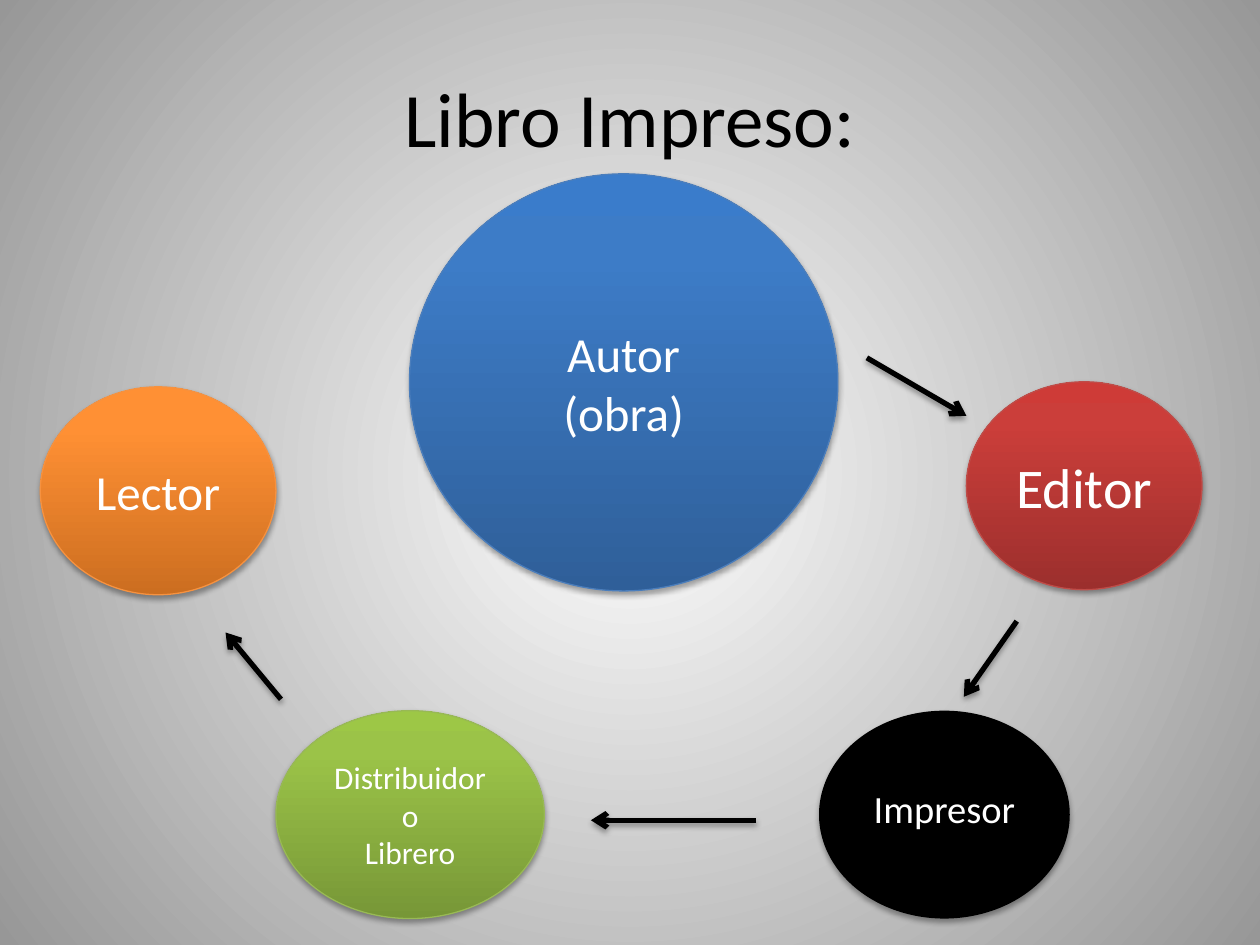
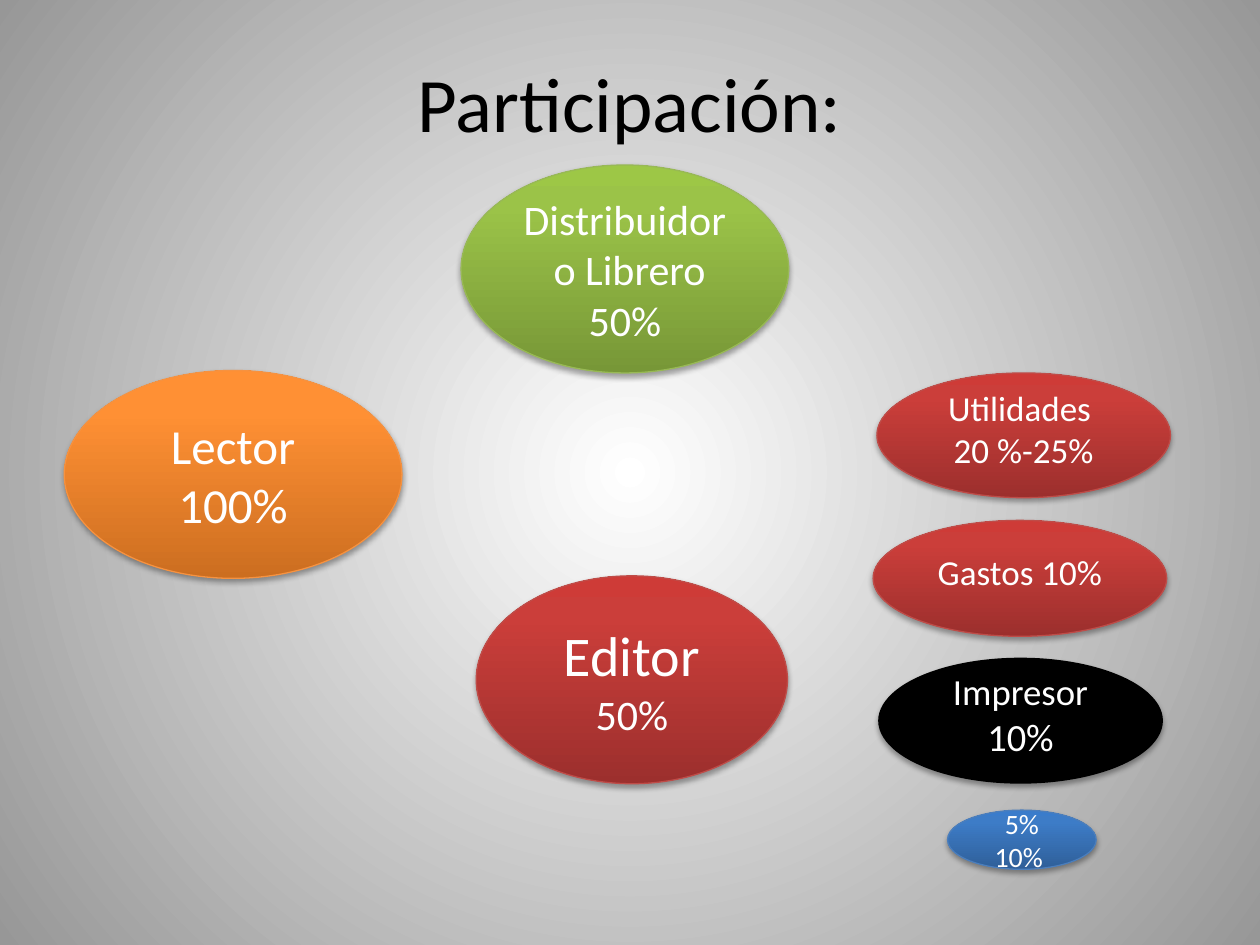
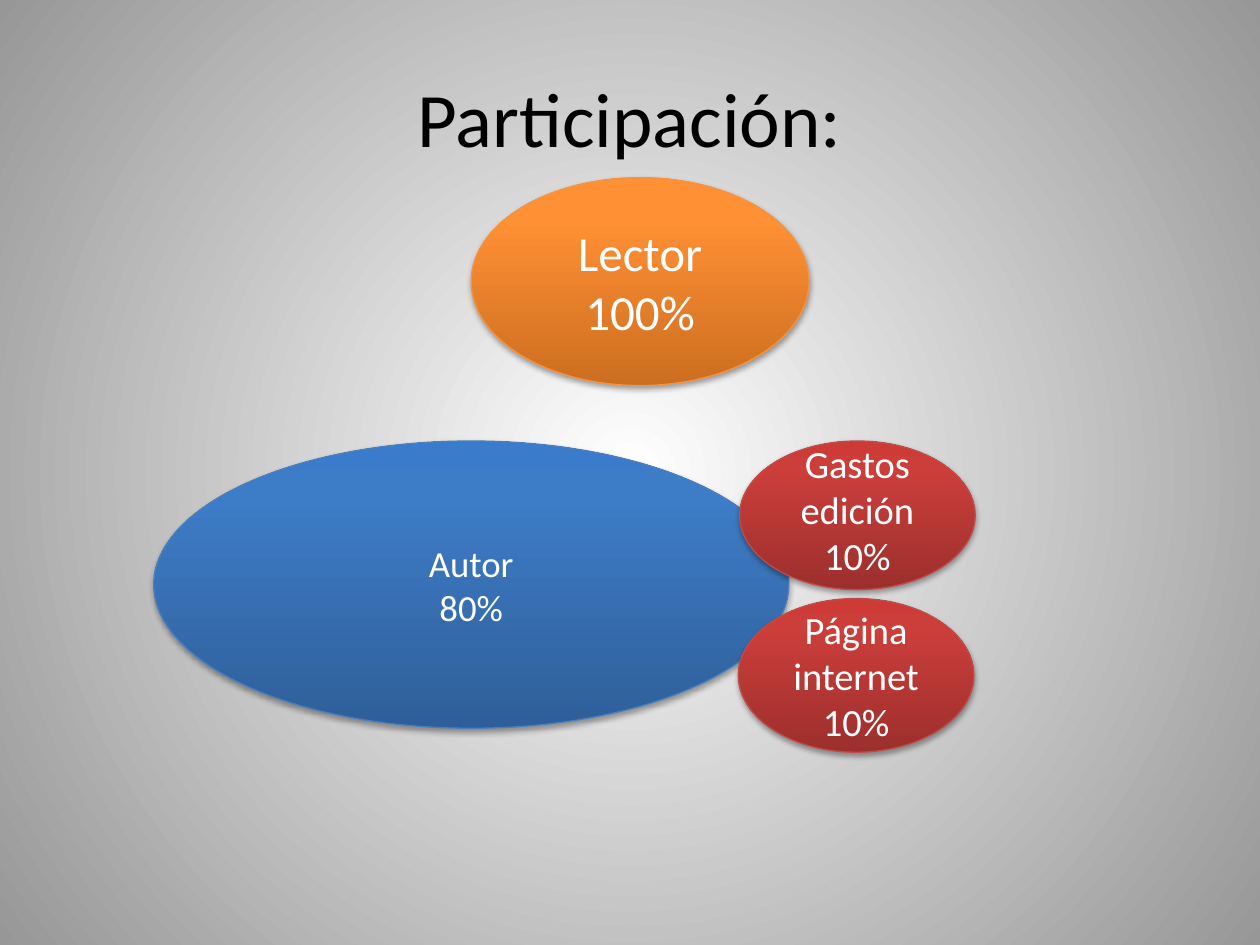
import pptx
import pptx.util
import pptx.dml.color
import pptx.enum.shapes
import pptx.enum.text
import pptx.oxml
import pptx.oxml.ns

# Grid: 100 columns by 75 rows
deck = pptx.Presentation()
deck.slide_width = pptx.util.Inches(10)
deck.slide_height = pptx.util.Inches(7.5)
cell = deck.slide_width / 100
qn = pptx.oxml.ns.qn
names = pptx.oxml.ns.nsdecls("a")
mid = pptx.enum.text.MSO_ANCHOR.MIDDLE


def grade(fill, props, stops, kind):
    """Fill with a gradient; stops are (percent, hex) pairs."""
    fill.solid()
    marks = "".join(f'<a:gs pos="{pos * 1000}"><a:srgbClr val="{tint}"/></a:gs>'
                    for pos, tint in stops)
    flat = props.find(qn("a:solidFill"))
    props.replace(flat, pptx.oxml.parse_xml(
        f'<a:gradFill {names} rotWithShape="1"><a:gsLst>{marks}</a:gsLst>{kind}</a:gradFill>'))


def write(frame, lines, tint):
    """Centred lines, each a (text, size) pair."""
    frame.word_wrap = True
    frame.vertical_anchor = mid
    for num, (text, size) in enumerate(lines):
        para = frame.paragraphs[0] if num == 0 else frame.add_paragraph()
        para.alignment = pptx.enum.text.PP_ALIGN.CENTER
        run = para.add_run()
        run.text = text
        run.font.name = "Calibri"
        run.font.size = pptx.util.Pt(size)
        run.font.color.rgb = pptx.dml.color.RGBColor.from_string(tint)


# Shared look
radial = ('<a:path path="circle">'
          '<a:fillToRect l="50000" t="50000" r="50000" b="50000"/></a:path>')
upward = '<a:lin ang="16200000" scaled="0"/>'
shade = (f'<a:outerShdw {names} blurRad="40000" dist="23000" dir="5400000" rotWithShape="0">'
         '<a:srgbClr val="000000"><a:alpha val="35000"/></a:srgbClr></a:outerShdw>')
black, white = "000000", "FFFFFF"

# Role colours: bottom, upper part, top, outline
roles = {
    "author": ("2F5F99", "3D7CC7", "3A7CCB", "4B7EBC"),
    "editor": ("9C2F2D", "CB3E3A", "CE3B37", "BF4C48"),
    "seller": ("779737", "9BC348", "9DC746", "98B955"),
    "reader": ("CC6E20", "FF9034", "FF9136", "F69240"),
    "printer": None,
}

# Slides: title, title rows, ovals (role, left, top, width, height, lift, lines), arrows
pages = [
    ("Libro Impreso:", 12.5, [
        ("author", 32.5, 13.8, 34, 33.1, 0, [("Autor", 28), ("(obra)", 28)]),
        ("editor", 76.7, 30.3, 18.7, 16.5, 0, [("Editor", 32)]),
        ("printer", 65, 56.4, 19.9, 16.5, 1, [("Impresor", 22)]),
        ("seller", 21.9, 56.4, 21.3, 16.5, 0,
         [("Distribuidor", 18), ("o", 18), ("Librero", 18)]),
        ("reader", 3.2, 30.7, 18.7, 16.5, 0, [("Lector", 28)]),
    ], [
        (68.8, 28.4, 76.7, 33),
        (80.7, 49.3, 76.5, 55.3),
        (60, 65.1, 46.9, 65.1),
        (22.3, 55.5, 17.9, 50.2),
    ]),
    ("Participación:", 10.1, [
        ("author", 75.2, 64.3, 11.8, 4.7, 0, [("5%", 16), ("10% ", 16)]),
        ("editor", 37.8, 45.7, 24.7, 16.5, 0, [("Editor", 32), ("50%", 24)]),
        ("printer", 69.7, 52.2, 22.6, 10, 1, [("Impresor", 21), ("10%", 22)]),
        ("seller", 36.6, 13.1, 26, 16.5, 0,
         [("Distribuidor", 24), (" o Librero", 24), ("50%", 24)]),
        ("reader", 5.1, 29.4, 26.8, 16.5, 0, [("Lector", 28), ("100%", 28)]),
        ("editor", 69.3, 41.3, 23.3, 9.2, 1, [("Gastos 10%", 20)]),
        ("editor", 69.6, 29.6, 23.3, 9.9, 1, [("Utilidades ", 20), ("20 %-25%", 20)]),
    ], []),
    ("Participación:", 12.5, [
        ("author", 12.2, 35, 50.4, 22.8, 0, [("Autor", 21), ("80%", 21)]),
        ("editor", 58.6, 47.5, 18.7, 12.2, 0, [("Página internet", 22), ("10%", 22)]),
        ("reader", 37.4, 14.1, 26.8, 16.5, 0, [("Lector", 28), ("100%", 28)]),
        ("editor", 58.7, 35, 18.7, 11.8, 1, [("Gastos edición", 22), ("10%", 22)]),
    ], []),
]

# Background on the master
master = deck.slide_master
back = master.background.fill
back.solid()
grade(back, master.element.find(".//" + qn("p:bgPr")),
      [(0, "FFFFFF"), (100, "979797")], radial)

for title, rows, ovals, arrows in pages:
    slide = deck.slides.add_slide(deck.slide_layouts[6])

    # Ovals
    for role, left, top, wide, high, lift, lines in ovals:
        oval = slide.shapes.add_shape(
            pptx.enum.shapes.MSO_SHAPE.OVAL,
            *[round(n * cell) for n in (left, top, wide, high)])
        props = oval.element.spPr
        if roles[role]:
            low, main, high_tint, edge = roles[role]
            grade(oval.fill, props, [(0, low), (80, main), (100, high_tint)], upward)
            oval.line.color.rgb = pptx.dml.color.RGBColor.from_string(edge)
            oval.line.width = pptx.util.Pt(0.75)
        else:
            oval.fill.solid()
            oval.fill.fore_color.rgb = pptx.dml.color.RGBColor.from_string(black)
            oval.line.fill.background()
        oval.shadow.inherit = False
        props.find(qn("a:effectLst")).append(pptx.oxml.parse_xml(shade))
        oval.text_frame.margin_bottom = round((0.5 + lift) * cell)
        write(oval.text_frame, lines, white)

    # Arrows
    for ends in arrows:
        arrow = slide.shapes.add_connector(
            pptx.enum.shapes.MSO_CONNECTOR.STRAIGHT, *[round(n * cell) for n in ends])
        arrow.line.color.rgb = pptx.dml.color.RGBColor.from_string(black)
        arrow.line.width = pptx.util.Pt(3)
        props = arrow.element.spPr
        props.find(qn("a:ln")).append(
            pptx.oxml.parse_xml(f'<a:tailEnd {names} type="arrow"/>'))
        glow = pptx.oxml.parse_xml(f"<a:effectLst {names}/>")
        glow.append(pptx.oxml.parse_xml(shade))
        props.append(glow)

    # Title
    head = slide.shapes.add_textbox(
        *[round(n * cell) for n in (5, 3, 90, rows)])
    write(head.text_frame, [(title, 44)], black)

deck.save("out.pptx")
